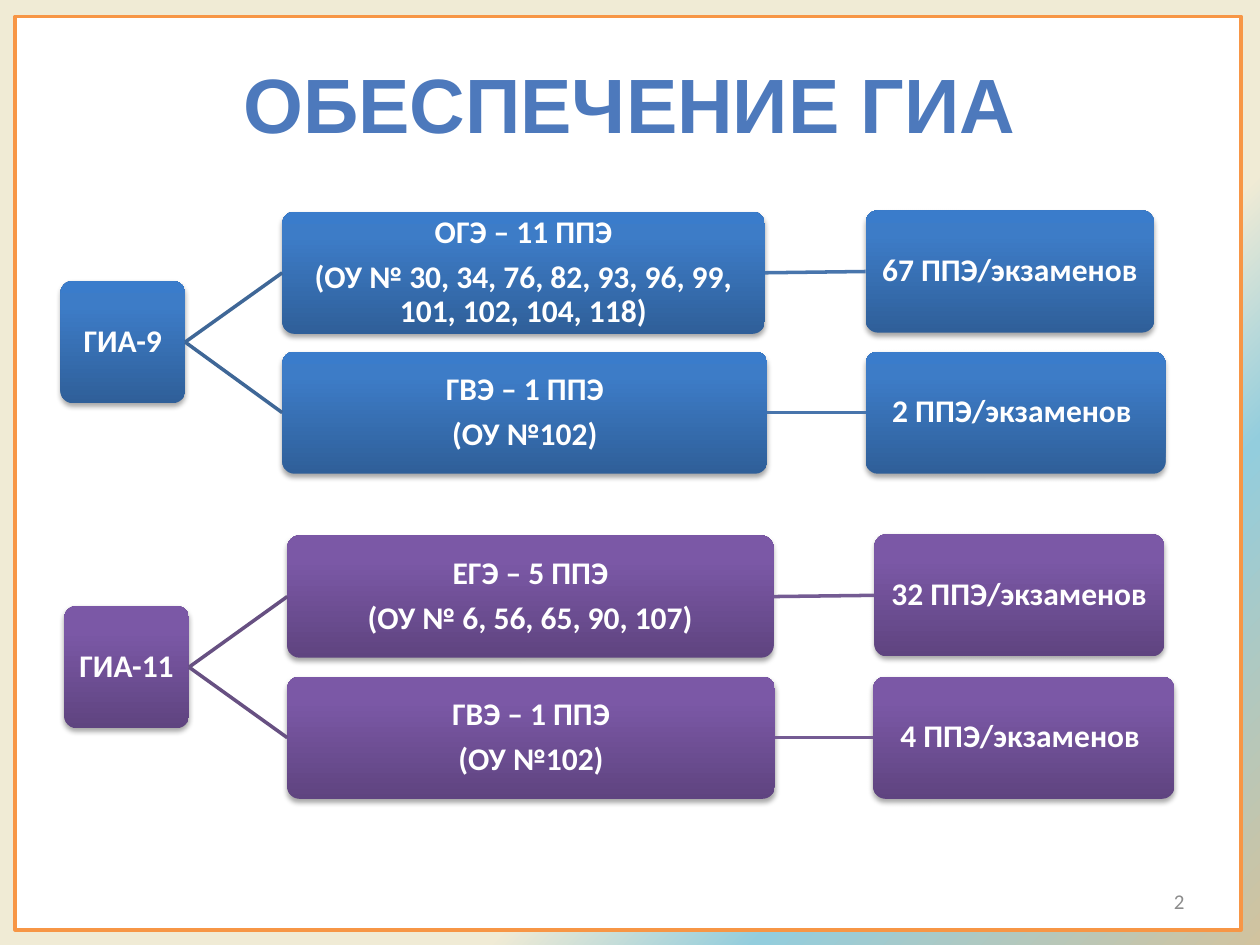
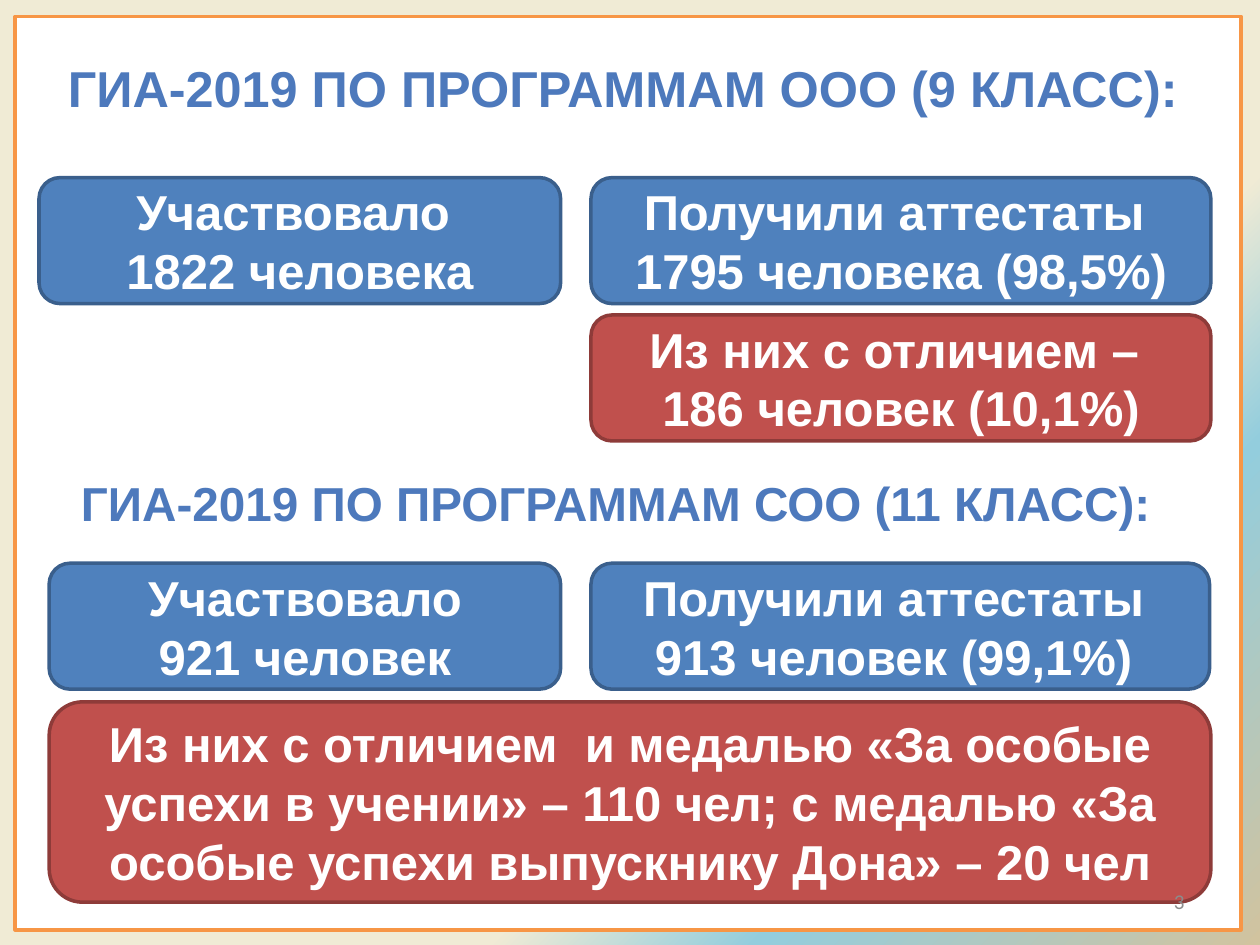
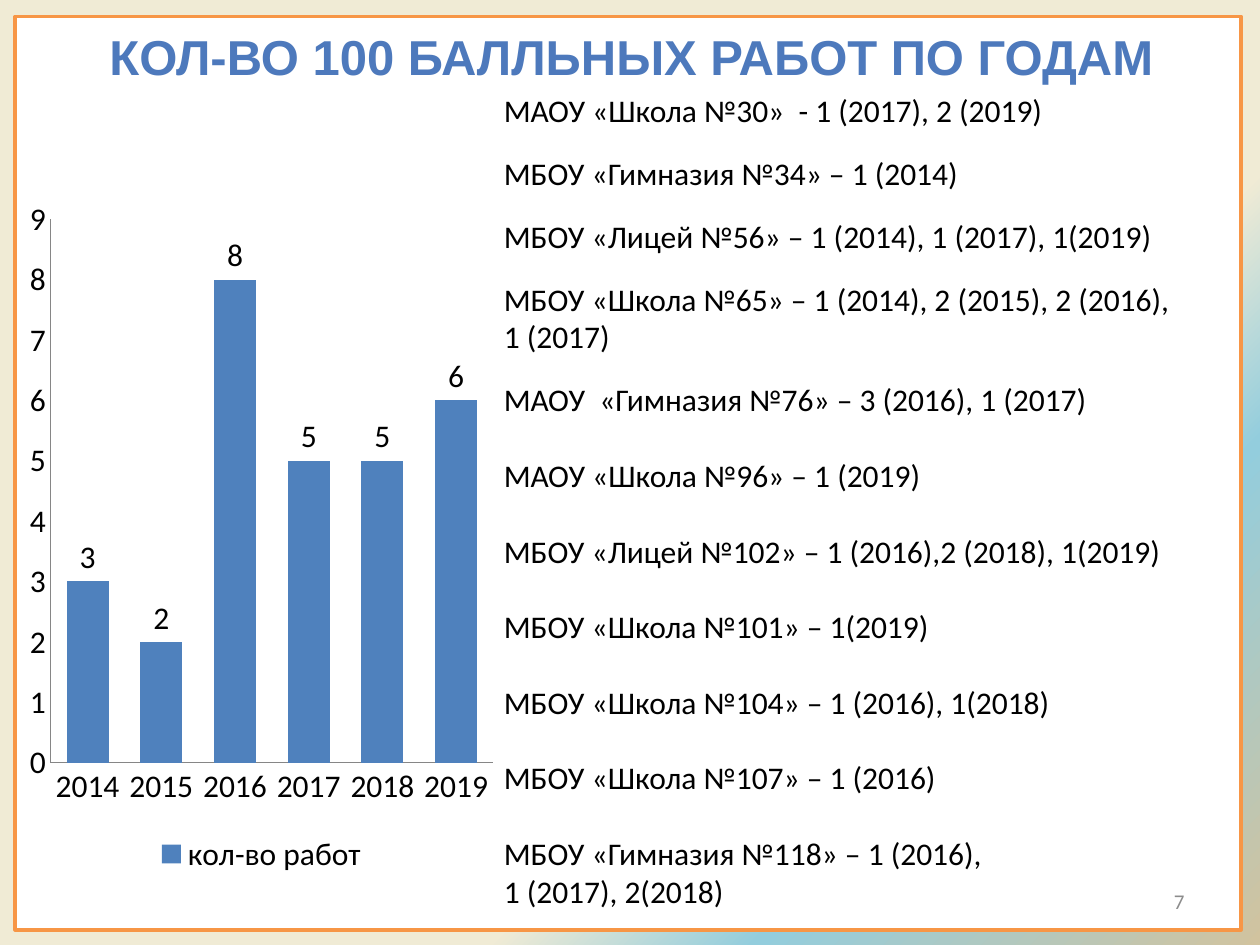
import pptx
import pptx.chart.data
import pptx.dml.color
import pptx.enum.chart
import pptx.enum.shapes
import pptx.enum.text
import pptx.oxml.ns
import pptx.util
import lxml.etree

PX = 9144
COLORS = {
    "white": "FFFFFF", "black": "000000", "number": "8C8C8C", "frame": "F79646", "axis": "868686",
    "blue": "4F81BD", "blue edge": "3A5F8C", "red": "C0504D", "red edge": "8E3B39",
    "blue branch": "3F6797", "blue link": "4875AC",
    "violet branch": "675082", "violet link": "745B93",
}
GRADIENTS = {
    "background": [(65, "F0EBD5"), (77, "93CDDD"), (100, "D1C39F")],
    "heading": [(0, "7494C9"), (49, "4D79BC"), (50, "346AAA"), (92, "325F94"), (100, "315D91")],
    "blue": [(0, "2F5F99"), (80, "3D7CC7"), (100, "3A7CCB")],
    "violet": [(0, "5F4480"), (80, "7B58A6"), (100, "7C57A8")],
}
RGB = {name: pptx.dml.color.RGBColor.from_string(value) for name, value in COLORS.items()}
Pt = pptx.util.Pt
ALIGN = pptx.enum.text.PP_ALIGN
ANCHOR = pptx.enum.text.MSO_ANCHOR
SHAPE = pptx.enum.shapes.MSO_SHAPE
qn = pptx.oxml.ns.qn


def blend(fill, owner, name, angle):
    fill.gradient()
    gradient = owner.find(".//" + qn("a:gradFill"))
    stops = gradient.find(qn("a:gsLst"))
    stops.clear()
    for position, value in GRADIENTS[name]:
        stop = lxml.etree.SubElement(stops, qn("a:gs"), pos=str(position * 1000))
        lxml.etree.SubElement(stop, qn("a:srgbClr"), val=value)
    gradient.find(qn("a:lin")).set("ang", str(angle * 60000))


def write(box, lines, size, color="white", font="Arial", bold=True, align=ALIGN.CENTER):
    frame = box.text_frame
    frame.word_wrap = True
    frame.auto_size = pptx.enum.text.MSO_AUTO_SIZE.NONE
    frame.vertical_anchor = ANCHOR.MIDDLE
    for index, line in enumerate(lines):
        para = frame.add_paragraph() if index else frame.paragraphs[0]
        para.alignment = align
        for row, piece in enumerate(line.split("\n")):
            if row:
                para.add_line_break()
            span = para.add_run()
            span.text = piece
            span.font.size = Pt(size)
            span.font.name = font
            span.font.bold = bold
            if color == "heading":
                blend(span.font.fill, para._p[-1], "heading", 90)
            else:
                span.font.color.rgb = RGB[color]
    return frame


deck = pptx.Presentation()
deck.slide_width = 1000 * PX
deck.slide_height = 750 * PX
master = deck.slide_master
blend(master.background.fill, master.element, "background", 45)

titles = [
    ("ОБЕСПЕЧЕНИЕ ГИА", 44, (50, 30, 900, 103)),
    ("ГИА-2019 ПО ПРОГРАММАМ ООО (9 КЛАСС):", 28.8, (12, 30, 965, 79)),
    ("КОЛ-ВО 100 БАЛЛЬНЫХ РАБОТ ПО ГОДАМ", 28, (51, 13, 900, 63)),
]
pages = []
for text, size, place in titles:
    page = deck.slides.add_slide(deck.slide_layouts[5])
    title = page.shapes.title
    title.left, title.top, title.width, title.height = [value * PX for value in place]
    write(title, [text], size, "heading")
    pages.append(page)
scheme_page, results_page, years_page = pages

border = scheme_page.shapes.add_shape(SHAPE.RECTANGLE, 12 * PX, 13 * PX, 973 * PX, 725 * PX)
border.shadow.inherit = False
border.fill.solid()
border.fill.fore_color.rgb = RGB["white"]
border.line.color.rgb = RGB["frame"]
border.line.width = Pt(2)
border.element.nvSpPr.cNvPr.set("id", "100")
master.shapes.element.insert(2, border.element)

trees = [
    ("blue", [
        (48, 223, 99, ["ГИА-9"]),
        (224, 168, 383, ["ОГЭ – 11 ППЭ", "(ОУ № 30, 34, 76, 82, 93, 96, 99, 101, 102, 104, 118)"]),
        (687, 167, 229, ["67 ППЭ/экзаменов"]),
        (224, 279, 385, ["ГВЭ – 1 ППЭ", "(ОУ №102)"]),
        (687, 279, 238, ["2 ППЭ/экзаменов "]),
    ]),
    ("violet", [
        (51, 481, 99, ["ГИА-11"]),
        (228, 425, 386, ["ЕГЭ – 5 ППЭ", "(ОУ № 6, 56, 65, 90, 107)"]),
        (694, 424, 230, ["32 ППЭ/экзаменов"]),
        (228, 537, 387, ["ГВЭ – 1 ППЭ", "(ОУ №102)"]),
        (693, 537, 239, ["4 ППЭ/экзаменов "]),
    ]),
]
for tone, nodes in trees:
    boxes = []
    for left, top, width, lines in nodes:
        box = scheme_page.shapes.add_shape(SHAPE.ROUNDED_RECTANGLE, left * PX, top * PX, width * PX, 97 * PX)
        box.adjustments[0] = 0.1
        blend(box.fill, box.element.spPr, tone, 270)
        box.line.fill.background()
        box.shadow.inherit = False
        effects = box.element.spPr.find(qn("a:effectLst"))
        shadow = lxml.etree.SubElement(effects, qn("a:outerShdw"), blurRad=str(Pt(3.1)),
                                       dist=str(Pt(1.8)), dir="5400000", rotWithShape="0")
        shade = lxml.etree.SubElement(shadow, qn("a:srgbClr"), val=COLORS["black"])
        lxml.etree.SubElement(shade, qn("a:alpha"), val="35000")
        frame = write(box, lines, 18, font="Calibri")
        frame.margin_left = frame.margin_right = frame.margin_top = frame.margin_bottom = 4 * PX
        for para in frame.paragraphs:
            para.line_spacing = 0.9
            para.space_after = Pt(6.3)
        boxes.append(box)
    for start, end, kind in [(0, 1, "branch"), (1, 2, "link"), (0, 3, "branch"), (3, 4, "link")]:
        line = scheme_page.shapes.add_connector(pptx.enum.shapes.MSO_CONNECTOR.STRAIGHT, 0, 0, 0, 0)
        line.begin_connect(boxes[start], 3)
        line.end_connect(boxes[end], 1)
        line.line.color.rgb = RGB[f"{tone} {kind}"]
        line.line.width = Pt(2)
        lxml.etree.SubElement(line.element.spPr, qn("a:effectLst"))

results = [
    ("blue", 31, 141, 414, 100, ["Участвовало ", "1822 человека"]),
    ("blue", 469, 141, 492, 100, ["Получили аттестаты ", "1795 человека (98,5%)"]),
    ("red", 469, 250, 492, 100, ["Из них с отличием – ", "186 человек (10,1%)"]),
    ("blue", 39, 447, 406, 100, ["Участвовало", "921 человек"]),
    ("blue", 469, 447, 491, 100, ["Получили аттестаты ", "913 человек (99,1%) "]),
    ("red", 39, 557, 922, 159, [
        "Из них с отличием  и медалью «За особые успехи в учении» – 110 чел; "
        "с медалью «За особые успехи выпускнику Дона» – 20 чел"]),
]
for tone, left, top, width, height, lines in results:
    box = results_page.shapes.add_shape(SHAPE.ROUNDED_RECTANGLE, left * PX, top * PX, width * PX, height * PX)
    box.shadow.inherit = False
    box.fill.solid()
    box.fill.fore_color.rgb = RGB[tone]
    box.line.color.rgb = RGB[tone + " edge"]
    box.line.width = Pt(2)
    write(box, lines, 28)
heading = results_page.shapes.add_textbox(39 * PX, 359 * PX, 900 * PX, 79 * PX)
write(heading, ["ГИА-2019 ПО ПРОГРАММАМ СОО (11 КЛАСС):"], 27.2, "heading")

data = pptx.chart.data.CategoryChartData()
data.categories = ["2014", "2015", "2016", "2017", "2018", "2019"]
data.add_series("кол-во работ", [3, 2, 8, 5, 5, 6])
chart = years_page.shapes.add_chart(
    pptx.enum.chart.XL_CHART_TYPE.COLUMN_CLUSTERED, 16 * PX, 148 * PX, 383 * PX, 550 * PX, data).chart
chart.has_title = False
chart.font.size = Pt(18)
chart.font.name = "Calibri"
chart.font.color.rgb = RGB["black"]
chart.has_legend = True
chart.legend.position = pptx.enum.chart.XL_LEGEND_POSITION.BOTTOM
chart.legend.include_in_layout = False
for axis in (chart.category_axis, chart.value_axis):
    axis.has_major_gridlines = False
    axis.major_tick_mark = pptx.enum.chart.XL_TICK_MARK.NONE
    axis.minor_tick_mark = pptx.enum.chart.XL_TICK_MARK.NONE
    axis.format.line.color.rgb = RGB["axis"]
chart.value_axis.minimum_scale = 0
chart.value_axis.maximum_scale = 9
chart.value_axis.major_unit = 1
plot = chart.plots[0]
plot.gap_width = 75
plot.vary_by_categories = False
plot.has_data_labels = True
plot.data_labels.show_value = True
plot.data_labels.position = pptx.enum.chart.XL_LABEL_POSITION.OUTSIDE_END
columns = plot.series[0].format.fill
columns.solid()
columns.fore_color.rgb = RGB["blue"]

schools = [
    "МАОУ «Школа №30»  - 1 (2017), 2 (2019)",
    "МБОУ «Гимназия №34» – 1 (2014)",
    "МБОУ «Лицей №56» – 1 (2014), 1 (2017), 1(2019)",
    "МБОУ «Школа №65» – 1 (2014), 2 (2015), 2 (2016),\n1 (2017)",
    "МАОУ  «Гимназия №76» – 3 (2016), 1 (2017)",
    "МАОУ «Школа №96» – 1 (2019)",
    "МБОУ «Лицей №102» – 1 (2016),2 (2018), 1(2019)",
    "МБОУ «Школа №101» – 1(2019)",
    "МБОУ «Школа №104» – 1 (2016), 1(2018)",
    "МБОУ «Школа №107» – 1 (2016)",
    "МБОУ «Гимназия №118» – 1 (2016), \n1 (2017), 2(2018)",
]
school_list = years_page.shapes.add_textbox(390 * PX, 67 * PX, 586 * PX, 660 * PX)
frame = write(school_list, schools, 18, "black", "Calibri", False, ALIGN.LEFT)
frame.vertical_anchor = ANCHOR.TOP
for index, para in enumerate(frame.paragraphs[1:], 1):
    para.space_before = Pt(14.4 if index < 5 else 21.6)

for page, number in zip(pages, ["2", "3", "7"]):
    box = page.shapes.add_textbox(717 * PX, 695 * PX, 233 * PX, 40 * PX)
    write(box, [number], 12, "number", "Calibri", False, ALIGN.RIGHT)

deck.save("out.pptx")
